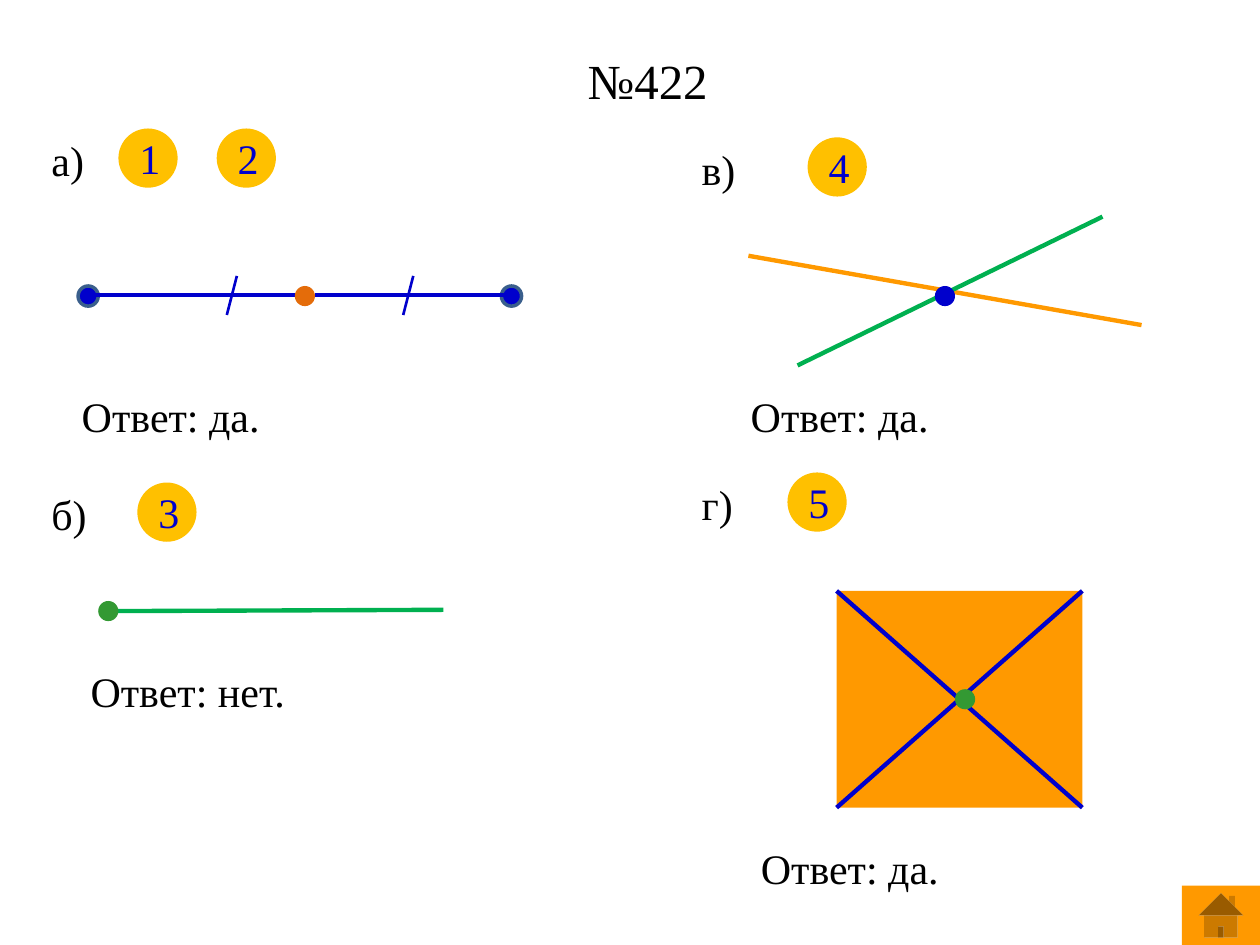
from dataclasses import dataclass

from lxml import etree
from pptx import Presentation
from pptx.dml.color import RGBColor
from pptx.enum.shapes import MSO_CONNECTOR, MSO_SHAPE
from pptx.enum.text import MSO_ANCHOR, PP_ALIGN
from pptx.oxml.ns import qn
from pptx.util import Inches, Pt

STRAIGHT = MSO_CONNECTOR.STRAIGHT
OVAL, RECTANGLE = MSO_SHAPE.OVAL, MSO_SHAPE.RECTANGLE
HOME_BUTTON = MSO_SHAPE.ACTION_BUTTON_HOME
MIDDLE, CENTER, LEFT = MSO_ANCHOR.MIDDLE, PP_ALIGN.CENTER, PP_ALIGN.LEFT


@dataclass(frozen=True)
class Theme:
    font: str = "Times New Roman"
    title_size: int = 28
    body_size: int = 24
    black: str = "000000"
    blue: str = "0000CC"
    outline: str = "3A5F8C"
    orange: str = "FF9900"
    midpoint: str = "E46C0A"
    amber: str = "FFC000"
    green: str = "00B050"
    dark_green: str = "339933"


theme = Theme()
prs = Presentation()
prs.slide_width, prs.slide_height = Inches(10), Inches(7.5)
slide = prs.slides.add_slide(prs.slide_layouts[6])
shapes = slide.shapes


def add_filled(kind, left, top, width, height, color, outline=None):
    figure = shapes.add_shape(kind, Inches(left), Inches(top), Inches(width), Inches(height))
    figure.shadow.inherit = False
    figure.fill.solid()
    figure.fill.fore_color.rgb = RGBColor.from_string(color)
    if outline:
        figure.line.color.rgb = RGBColor.from_string(outline)
        figure.line.width = Pt(2)
    else:
        figure.line.fill.background()
    return figure


def write(holder, text, color=theme.black, size=theme.body_size, align=LEFT):
    holder.text_frame.word_wrap = True
    paragraph = holder.text_frame.paragraphs[0]
    paragraph.text = text
    paragraph.alignment = align
    paragraph.font.name = theme.font
    paragraph.font.size = Pt(size)
    paragraph.font.color.rgb = RGBColor.from_string(color)


title = shapes.add_textbox(Inches(4.22), Inches(0.16), Inches(1.84), Inches(0.95))
title.text_frame.vertical_anchor = MIDDLE
write(title, "№422", size=theme.title_size, align=CENTER)

# Item letters and answers
for text, left, top, width in [
    ("а)", 0.31, 1.02, 0.7),
    ("б)", 0.31, 3.83, 0.7),
    ("в)", 5.47, 1.09, 0.7),
    ("г)", 5.47, 3.75, 0.7),
    ("Ответ: да.", 0.55, 3.05, 2.42),
    ("Ответ: нет.", 0.62, 5.23, 1.88),
    ("Ответ: да.", 5.86, 3.05, 2.34),
    ("Ответ: да.", 5.94, 6.64, 2.27),
]:
    label = shapes.add_textbox(Inches(left), Inches(top), Inches(width), Inches(0.51))
    write(label, text)

# Numbered badges
BADGE = 0.47
badge_places = [(0.94, 1.02), (1.72, 1.02), (1.09, 3.83), (6.41, 1.09), (6.25, 3.75)]
for number, (left, top) in enumerate(badge_places, start=1):
    badge = add_filled(OVAL, left, top, BADGE, BADGE, theme.amber)
    badge.text_frame.vertical_anchor = MIDDLE
    write(badge, str(number), theme.blue, align=CENTER)

# The rectangle, and the end points that lie under the lines
DOT = 0.16
box_left, box_top, box_width, box_height = 6.64, 4.69, 1.95, 1.72
box_right, box_bottom = box_left + box_width, box_top + box_height
add_filled(RECTANGLE, box_left, box_top, box_width, box_height, theme.orange)
for left in (0.62, 3.98):
    add_filled(OVAL, left, 2.27, DOT, DOT, theme.blue, theme.outline)

# Segments, equality ticks, crossing lines, ray and diagonals
for x1, y1, x2, y2, color, width in [
    (0.7, 2.34, 2.34, 2.34, theme.blue, 2.5),
    (2.5, 2.34, 4.06, 2.34, theme.blue, 2.5),
    (1.88, 2.19, 1.8, 2.5, theme.blue, 1.5),
    (3.28, 2.19, 3.2, 2.5, theme.blue, 1.5),
    (5.94, 2.03, 9.06, 2.58, theme.orange, 2.5),
    (6.33, 2.9, 8.75, 1.72, theme.green, 2.5),
    (0.86, 4.85, 3.52, 4.84, theme.green, 2.5),
    (box_left, box_top, box_right, box_bottom, theme.blue, 2.5),
    (box_right, box_top, box_left, box_bottom, theme.blue, 2.5),
]:
    line = shapes.add_connector(STRAIGHT, Inches(x1), Inches(y1), Inches(x2), Inches(y2))
    line.line.color.rgb = RGBColor.from_string(color)
    line.line.width = Pt(width)
    etree.SubElement(line._element.spPr, qn("a:effectLst"))

# Points that lie over the lines
for left, top, color in [
    (2.34, 2.27, theme.midpoint),
    (7.42, 2.27, theme.blue),
    (0.78, 4.77, theme.dark_green),
    (7.58, 5.47, theme.dark_green),
]:
    add_filled(OVAL, left, top, DOT, DOT, color)

add_filled(HOME_BUTTON, 9.38, 7.03, 0.62, 0.47, theme.orange)

prs.save("out.pptx")
